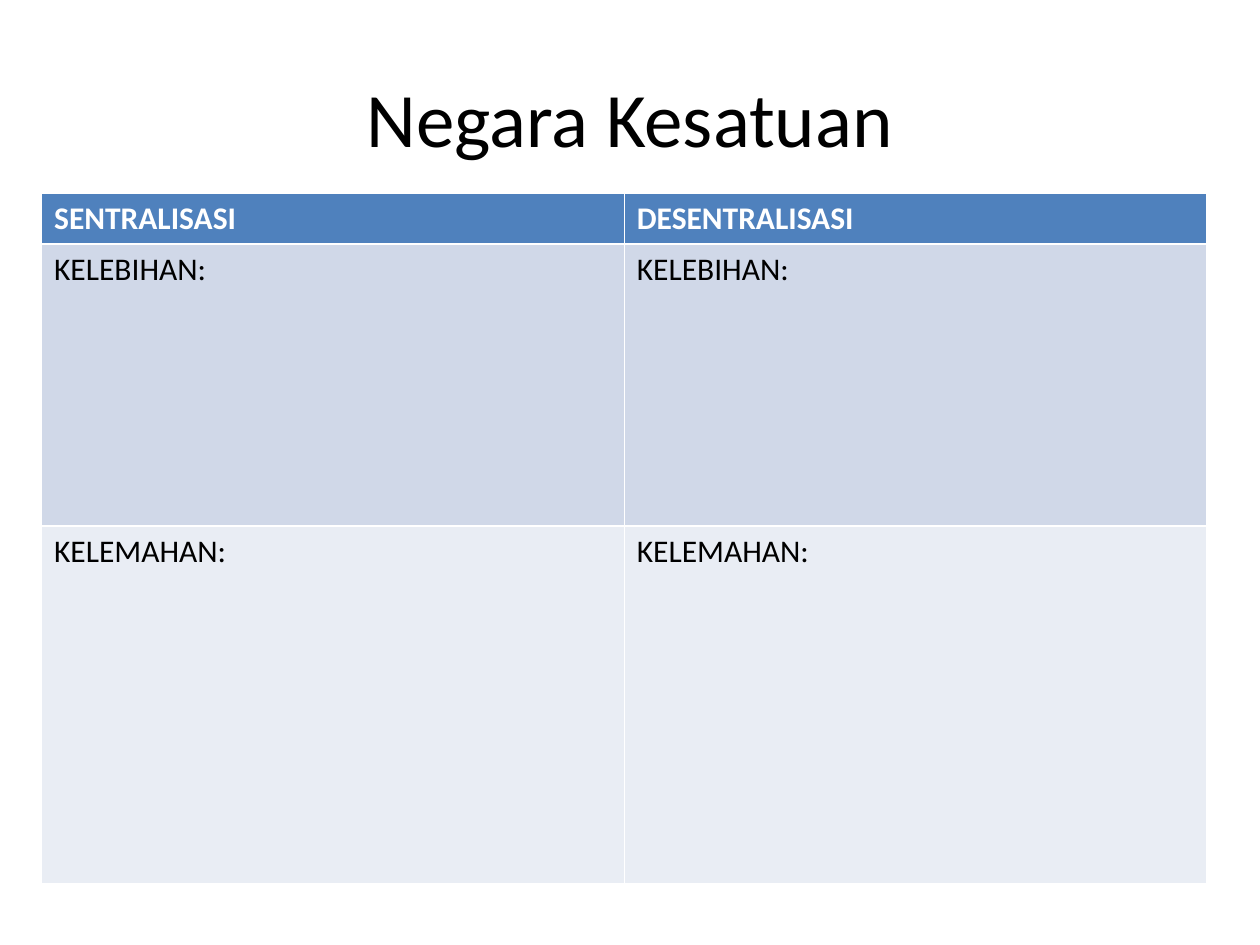
from pptx import Presentation
from pptx.dml.color import RGBColor
from pptx.enum.text import MSO_ANCHOR, PP_ALIGN
from pptx.util import Inches, Pt

CENTER = PP_ALIGN.CENTER
MIDDLE = MSO_ANCHOR.MIDDLE
BLACK = RGBColor(0x00, 0x00, 0x00)
WHITE = RGBColor(0xFF, 0xFF, 0xFF)
BLUE = RGBColor(0x4F, 0x81, 0xBD)
BAND = RGBColor(0xD0, 0xD8, 0xE8)
PALE = RGBColor(0xE9, 0xED, 0xF4)

# Label of each column, fill, text colour, bold, height
ROWS = [
    (["SENTRALISASI", "DESENTRALISASI"], BLUE, WHITE, True, 0.4),
    (["KELEBIHAN:"] * 2, BAND, BLACK, False, 2.24),
    (["KELEMAHAN:"] * 2, PALE, BLACK, False, 2.84),
]


class Deck:
    def __init__(self, face):
        self.face = face
        self.prs = Presentation()
        self.prs.slide_width = Inches(10)
        self.prs.slide_height = Inches(7.5)
        self.slide = self.prs.slides.add_slide(self.prs.slide_layouts[5])

    def style(self, para, size, color, bold=False):
        font = para.font
        font.name = self.face
        font.size = Pt(size)
        font.bold = bold
        font.color.rgb = color

    def title(self, text, left, top, width, height):
        box = self.slide.shapes.title
        box.left, box.top = Inches(left), Inches(top)
        box.width, box.height = Inches(width), Inches(height)
        frame = box.text_frame
        frame.text = text
        frame.vertical_anchor = MIDDLE
        para = frame.paragraphs[0]
        para.alignment = CENTER
        self.style(para, 44, BLACK)

    def table(self, rows, left, top, width):
        """Add a table; the built-in style draws its white borders."""
        height = sum(row[-1] for row in rows)
        grid = self.slide.shapes.add_table(
            len(rows), len(rows[0][0]),
            Inches(left), Inches(top), Inches(width), Inches(height)).table
        for r, (labels, fill, color, bold, tall) in enumerate(rows):
            grid.rows[r].height = Inches(tall)
            for c, label in enumerate(labels):
                cell = grid.cell(r, c)
                cell.text = label
                cell.fill.solid()
                cell.fill.fore_color.rgb = fill
                self.style(cell.text_frame.paragraphs[0], 18, color, bold)


def main():
    deck = Deck("Calibri")
    deck.title("Negara Kesatuan", 0.5, 0.3, 9, 1.25)
    deck.table(ROWS, 0.33, 1.53, 9.25)
    deck.prs.save("out.pptx")


if __name__ == "__main__":
    main()
